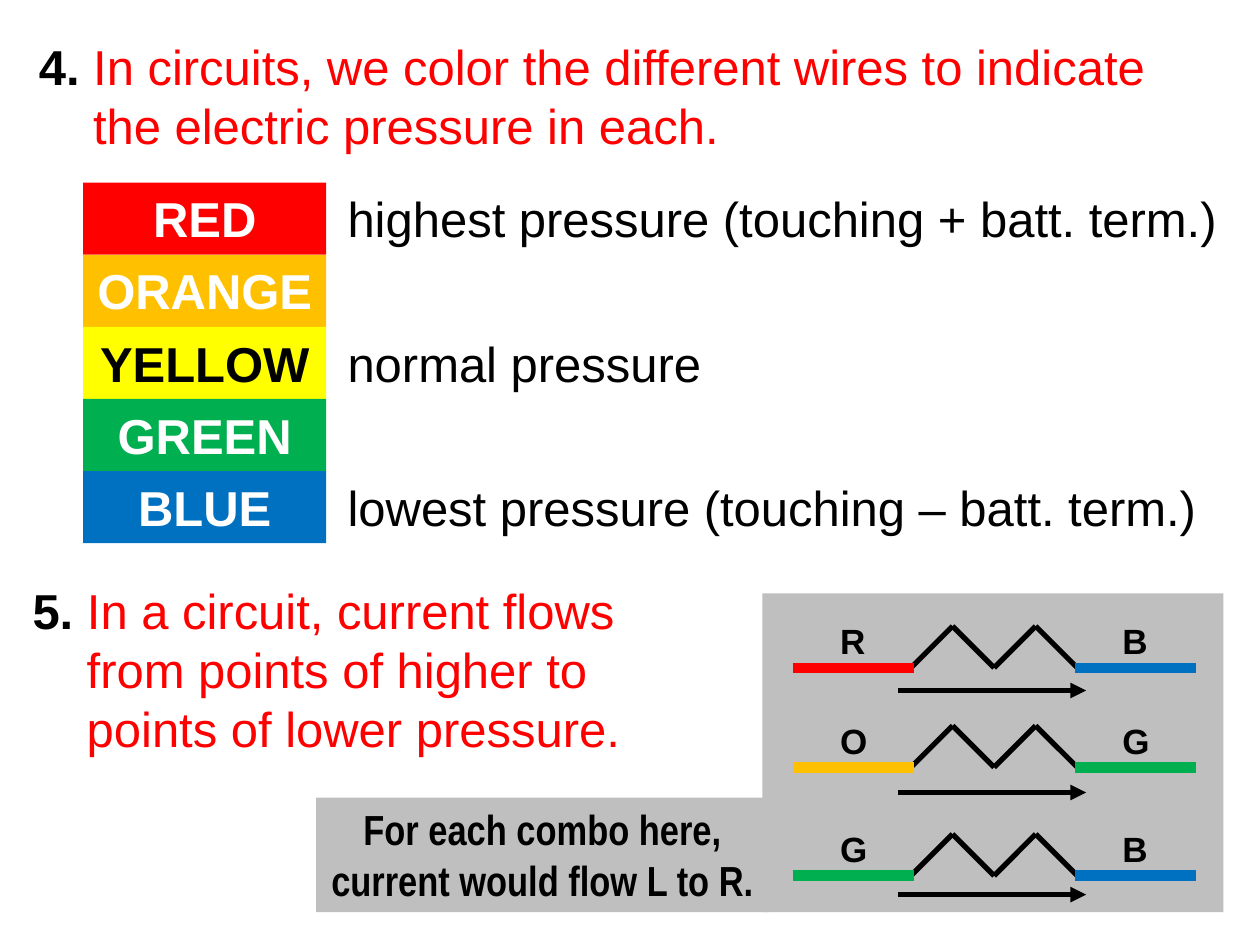
from itertools import pairwise
from lxml.etree import SubElement
from pptx import Presentation
from pptx.dml.color import RGBColor
from pptx.enum.shapes import MSO_CONNECTOR, MSO_SHAPE
from pptx.enum.text import MSO_ANCHOR, PP_ALIGN
from pptx.oxml.ns import qn
from pptx.util import Inches, Pt

BLACK = RGBColor(0x00, 0x00, 0x00)
WHITE = RGBColor(0xFF, 0xFF, 0xFF)
GRAY = RGBColor(0xBF, 0xBF, 0xBF)
RED = RGBColor(0xFF, 0x00, 0x00)
ORANGE = RGBColor(0xFF, 0xC0, 0x00)
YELLOW = RGBColor(0xFF, 0xFF, 0x00)
GREEN = RGBColor(0x00, 0xB0, 0x50)
BLUE = RGBColor(0x00, 0x70, 0xC0)

NOTES = [
    ("4.", ["In circuits, we color the different wires to indicate",
            "the electric pressure in each."], (0.21, 0.24, 9.09, 1.04)),
    ("5.", ["In a circuit, current flows", "from points of higher to",
            "points of lower pressure."], (0.16, 4.56, 4.99, 1.51)),
]
PRESSURES = [
    ("RED", RED, WHITE, "highest pressure (touching + batt. term.)", 7.19),
    ("ORANGE", ORANGE, WHITE, None, 0),
    ("YELLOW", YELLOW, BLACK, "normal pressure", 3.05),
    ("GREEN", GREEN, WHITE, None, 0),
    ("BLUE", BLUE, WHITE, "lowest pressure (touching – batt. term.)", 7.02),
]
COMBO_NOTE = ["For each combo here,", "current would flow L to R."]
COMBOS = [
    ("R", RED, "B", BLUE, 5.3, 5.48),
    ("O", ORANGE, "G", GREEN, 6.09, 6.29),
    ("G", GREEN, "B", BLUE, 6.95, 7.1),
]

SCALE_LEFT, SCALE_TOP, SCALE_WIDTH = 0.66, 1.45, 1.93
BAND = 2.86 / len(PRESSURES)
MEANING_LEFT = 2.66
HANGING = 0.43
ZIGZAG_LEFT, ZIGZAG_STEP = 7.23, 0.33
WIRE_LENGTH = 0.96
WIRE_LEFTS = (6.29, 8.53)
LETTER_LEFTS = (6.57, 8.81)
ARROW_SPAN = (7.13, 8.62)


def write(frame, lines, size, color=BLACK, bold=False, align=PP_ALIGN.LEFT, font="Arial"):
    frame.word_wrap = False
    for i, line in enumerate(lines):
        paragraph = frame.paragraphs[0] if i == 0 else frame.add_paragraph()
        paragraph.text = line
        paragraph.alignment = align
        paragraph.font.name = font
        paragraph.font.size = Pt(size)
        paragraph.font.bold = bold
        paragraph.font.color.rgb = color


def add_text(slide, box, lines, size, **style):
    frame = slide.shapes.add_textbox(*map(Inches, box)).text_frame
    write(frame, lines, size, **style)
    return frame


def add_block(slide, box, fill):
    block = slide.shapes.add_shape(MSO_SHAPE.RECTANGLE, *map(Inches, box))
    block.shadow.inherit = False
    block.fill.solid()
    block.fill.fore_color.rgb = fill
    block.line.fill.background()
    block.text_frame.vertical_anchor = MSO_ANCHOR.TOP
    return block.text_frame


def add_line(slide, start, end, color, width, arrow=False):
    line = slide.shapes.add_connector(MSO_CONNECTOR.STRAIGHT, *map(Inches, start + end))
    line.line.color.rgb = color
    line.line.width = Pt(width)
    if arrow:
        SubElement(line.line._get_or_add_ln(), qn("a:tailEnd"), type="triangle")
    SubElement(line._element.spPr, qn("a:effectLst"))


def add_note(slide, number, lines, box):
    frame = add_text(slide, box, [""] + lines[1:], 28, color=RED)
    for paragraph in frame.paragraphs:
        paragraph._p.get_or_add_pPr().set("marL", str(Inches(HANGING)))
    first = frame.paragraphs[0]
    first._p.get_or_add_pPr().set("indent", str(-Inches(HANGING)))
    label = first.add_run()
    label.text = number
    label.font.bold = True
    label.font.color.rgb = BLACK
    first.add_run().text = " " + lines[0]


def add_combo(slide, letters, colors, wire_y, arrow_y):
    peaks = [(ZIGZAG_LEFT + i * ZIGZAG_STEP, wire_y - i % 2 * ZIGZAG_STEP) for i in range(5)]
    for start, end in pairwise(peaks):
        add_line(slide, start, end, BLACK, 3)
    for letter, color, wire_left, letter_left in zip(letters, colors, WIRE_LEFTS, LETTER_LEFTS):
        add_line(slide, (wire_left, wire_y), (wire_left + WIRE_LENGTH, wire_y), color, 6)
        add_text(slide, (letter_left, wire_y - 0.43, 0.42, 0.44), [letter], 20, bold=True)
    add_line(slide, (ARROW_SPAN[0], arrow_y), (ARROW_SPAN[1], arrow_y), BLACK, 3, arrow=True)


def main():
    prs = Presentation()
    prs.slide_width, prs.slide_height = Inches(10), Inches(7.5)
    slide = prs.slides.add_slide(prs.slide_layouts[6])

    for note in NOTES:
        add_note(slide, *note)

    for row, (name, fill, ink, meaning, width) in enumerate(PRESSURES):
        top = SCALE_TOP + row * BAND
        band = add_block(slide, (SCALE_LEFT, top, SCALE_WIDTH, BAND), fill)
        write(band, [name], 28, color=ink, bold=True, align=PP_ALIGN.CENTER)
        if meaning:
            add_text(slide, (MEANING_LEFT, top, width, BAND), [meaning], 28)

    combo_note = add_block(slide, (2.51, 6.33, 3.59, 0.91), GRAY)
    write(combo_note, COMBO_NOTE, 24, bold=True, align=PP_ALIGN.CENTER, font="Arial Narrow")

    add_block(slide, (6.05, 4.71, 3.66, 2.53), GRAY)
    for left, left_color, right, right_color, wire_y, arrow_y in COMBOS:
        add_combo(slide, (left, right), (left_color, right_color), wire_y, arrow_y)

    prs.save("out.pptx")


if __name__ == "__main__":
    main()
